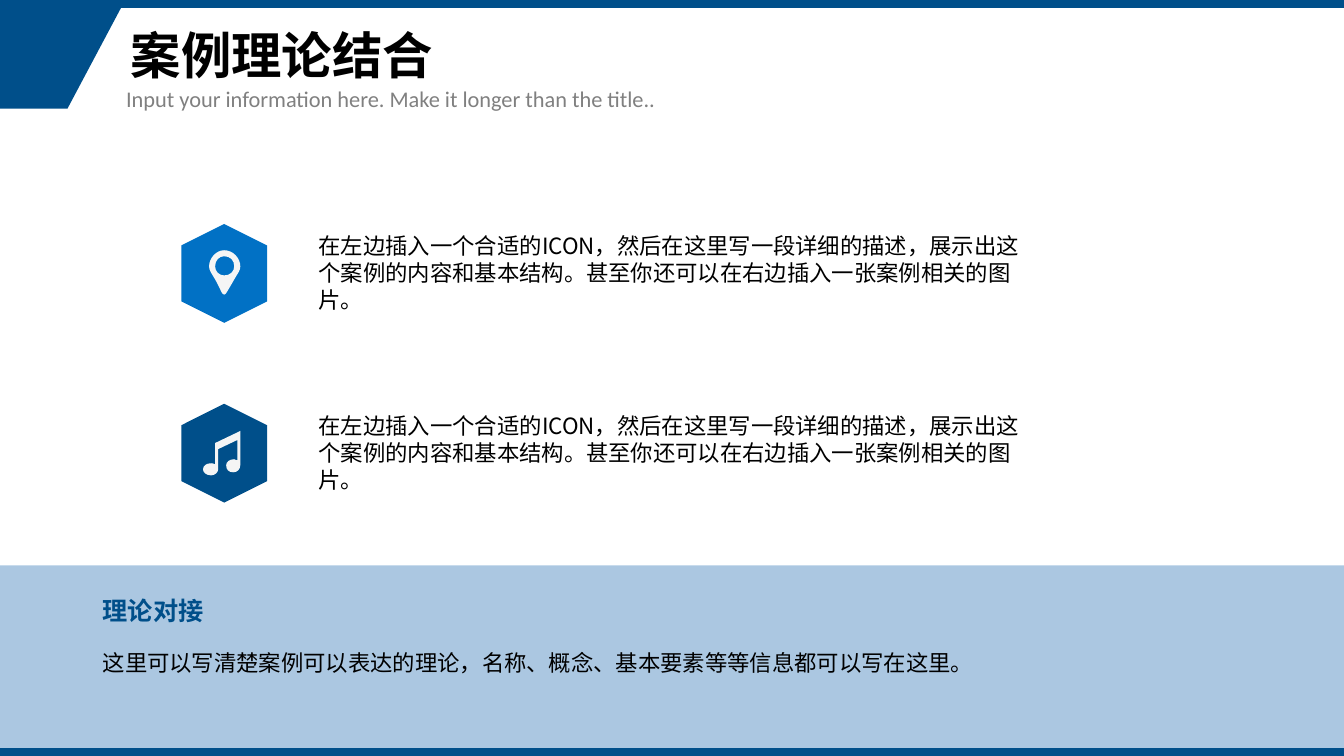
from lxml import etree
from pptx import Presentation
from pptx.dml.color import RGBColor
from pptx.enum.shapes import MSO_SHAPE
from pptx.enum.text import MSO_ANCHOR, PP_ALIGN
from pptx.oxml.ns import qn
from pptx.util import Cm, Pt

RECT, HEXAGON = MSO_SHAPE.RECTANGLE, MSO_SHAPE.HEXAGON
MIDDLE, LEFT = MSO_ANCHOR.MIDDLE, PP_ALIGN.LEFT
NAVY = RGBColor(0x00, 0x4F, 0x8A)
BLUE = RGBColor(0x01, 0x71, 0xC5)
PANEL = RGBColor(0x2E, 0x75, 0xB6)
GRAY = RGBColor(0x80, 0x80, 0x80)
BLACK = RGBColor(0, 0, 0)
ICON = RGBColor(0xF5, 0xF5, 0xF5)
CJK, LATIN = "Noto Sans CJK SC", "Calibri"

TITLE = "案例理论结合"
SUBTITLE = "Input your information here. Make it longer than the title.."
CASE = ("在左边插入一个合适的ICON，然后在这里写一段详细的描述，展示出这个案例的内容和基本结构。"
        "甚至你还可以在右边插入一张案例相关的图片。")
THEORY_HEAD = "理论对接"
THEORY = "这里可以写清楚案例可以表达的理论，名称、概念、基本要素等等信息都可以写在这里。"

# Icon contours around the hexagon centre: a 2-tuple is a straight step,
# a 6-tuple a Bézier curve (two control points, then the end).
PIN = [
    [(0, -23), (-8, -23, -15, -15, -15, -7), (-15, -3, -13, -1, -9, 6),
     (-5, 13, -3, 18, -3, 18), (-2, 20, -1, 21, 0, 21), (1, 21, 2, 20, 3, 18),
     (3, 18, 6, 13, 10, 6), (14, -1, 16, -3, 16, -7), (16, -15, 9, -23, 0, -23)],
    [(0, 2), (-5, 2, -9, -2, -9, -7), (-9, -13, -5, -17, 0, -17),
     (6, -17, 10, -13, 10, -7), (10, -2, 6, 2, 0, 2)],
]
NOTE = [
    [(-9, 11), (-12, 10, -11, 10, -13, 10), (-17, 10, -21, 12, -21, 16),
     (-21, 19, -18, 22, -13, 22), (-9, 22, -6, 19, -6, 16), (-6, -4),
     (13, -13), (13, 7), (10, 7, 11, 6, 10, 6), (5, 6, 2, 9, 2, 12),
     (2, 16, 4, 19, 9, 19), (13, 19, 16, 16, 16, 12), (16, -22), (-9, -10)],
]
CASES = [(BLUE, PIN, CASE), (NAVY, NOTE, CASE)]

SLIDE_W, SLIDE_H, BAR_H, PANEL_H = Cm(33.87), Cm(19.05), Cm(0.2), Cm(4.6)
ICON_X, CASE_Y, CASE_STEP = Cm(5.65), Cm(6.89), Cm(4.53)
HEX_W, HEX_H = Cm(2.49), Cm(2.16)
CASE_X, CASE_W, CASE_H = Cm(7.78), Cm(18.31), Cm(2.31)
THEORY_X = Cm(2.34)
ICON_UNIT = Cm(2.54) // 100


def paint(shape, color):
    shape.shadow.inherit = False
    shape.fill.solid()
    shape.fill.fore_color.rgb = color
    shape.line.fill.background()
    return shape


def add_block(s, kind, x, y, w, h, color):
    return paint(s.shapes.add_shape(kind, x, y, w, h), color)


def set_text(tf, text, size, color, font=CJK, bold=False):
    p = tf.paragraphs[0]
    p.text = text
    p.alignment = LEFT
    f = p.font
    f.size, f.bold, f.name = Pt(size), bold, font
    f.color.rgb = color
    latin = p._p.pPr.find(qn("a:defRPr")).find(qn("a:latin"))
    latin.addnext(etree.Element(qn("a:ea"), typeface=font))
    return p


def add_text(s, x, y, w, h, text, size, color, font=CJK, bold=False, wrap=True):
    tf = s.shapes.add_textbox(x, y, w, h).text_frame
    tf.word_wrap = wrap
    set_text(tf, text, size, color, font, bold)


def add_outline(s, contours, color):
    """Fill closed contours of straight steps and curves, in slide units, as one shape."""
    builder = s.shapes.build_freeform(*contours[0][0])
    for i, steps in enumerate(contours):
        if i:
            builder.move_to(*steps[0])
        builder.add_line_segments([step[-2:] for step in steps[1:]], close=True)
    shape = builder.convert_to_shape()

    lines = list(shape._element.iter(qn("a:lnTo")))
    steps = [step for contour in contours for step in contour[1:]]
    for line, step in zip(lines, steps):
        if len(step) == 6:
            curve = etree.Element(qn("a:cubicBezTo"))
            for x, y in zip(step[::2], step[1::2]):
                etree.SubElement(curve, qn("a:pt"),
                                 x=str(x - shape.left), y=str(y - shape.top))
            line.getparent().replace(line, curve)
    return paint(shape, color)


def add_icon(s, contours, cx, cy):
    placed = [[tuple((cy if i % 2 else cx) + v * ICON_UNIT for i, v in enumerate(step))
               for step in contour] for contour in contours]
    add_outline(s, placed, ICON)


def main():
    prs = Presentation()
    prs.slide_width, prs.slide_height = SLIDE_W, SLIDE_H
    s = prs.slides.add_slide(prs.slide_layouts[5])

    corner_bottom = Cm(2.74)
    add_outline(s, [[(0, BAR_H), (Cm(3.05), BAR_H), (Cm(1.7), corner_bottom),
                     (0, corner_bottom)]], NAVY)
    for y in (0, SLIDE_H - BAR_H):
        add_block(s, RECT, 0, y, SLIDE_W, BAR_H, NAVY)
    panel = add_block(s, RECT, 0, SLIDE_H - BAR_H - PANEL_H, SLIDE_W, PANEL_H, PANEL)
    rgb = panel.fill._xPr.find(qn("a:solidFill"))[0]
    etree.SubElement(rgb, qn("a:alpha"), val="40000")

    title = s.shapes.title
    title.left, title.top, title.width, title.height = Cm(3.04), BAR_H, Cm(28.5), Cm(2.54)
    title.text_frame.vertical_anchor = MIDDLE
    set_text(title.text_frame, TITLE, 36, BLACK, bold=True).line_spacing = 0.9
    add_text(s, Cm(2.93), Cm(2.03), Cm(19.81), Cm(0.94), SUBTITLE, 16, GRAY, LATIN)

    for i, (color, icon, text) in enumerate(CASES):
        cy = CASE_Y + i * CASE_STEP
        hexagon = add_block(s, HEXAGON, ICON_X - HEX_W // 2, cy - HEX_H // 2,
                            HEX_W, HEX_H, color)
        hexagon.rotation = 90
        add_icon(s, icon, ICON_X, cy)
        add_text(s, CASE_X, cy - CASE_H // 2, CASE_W, CASE_H, text, 16, BLACK)

    add_text(s, THEORY_X, Cm(16.23), Cm(29.21), Cm(0.94), THEORY, 16, BLACK)
    add_text(s, THEORY_X, Cm(14.88), Cm(3.07), Cm(1.02), THEORY_HEAD, 18, NAVY,
             bold=True, wrap=False)
    prs.save("out.pptx")


if __name__ == "__main__":
    main()
